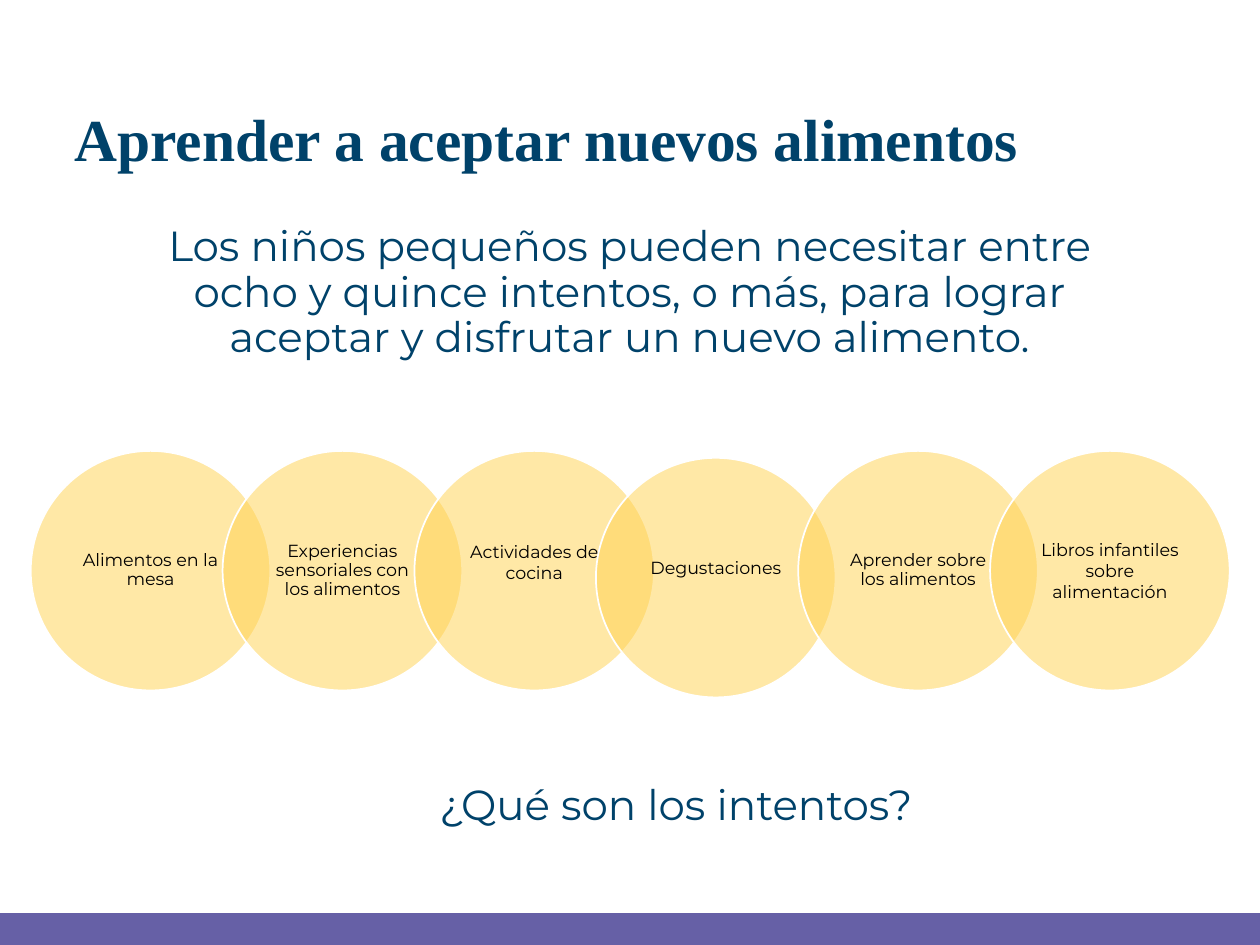
from lxml import etree
from pptx import Presentation
from pptx.dml.color import RGBColor
from pptx.enum import shapes, text
from pptx.oxml.ns import qn
from pptx.util import Cm, Pt

NAVY, GOLD, PURPLE = "00426A", "FFD24F", "6660A6"
BODY = "Montserrat"


def color(code):
    return RGBColor.from_string(code)


def write(frame, words, size, ink, face=BODY, bold=False, align="CENTER", gap=0.9):
    """Fill a text frame with one formatted paragraph."""
    frame.word_wrap = True
    frame.auto_size = text.MSO_AUTO_SIZE.NONE
    frame.text = words
    para = frame.paragraphs[0]
    para.alignment = getattr(text.PP_ALIGN, align)
    para.line_spacing = gap
    para.space_before = Pt(0)
    font = para.runs[0].font
    font.name, font.size, font.bold = face, Pt(size), bold
    font.color.rgb = color(ink)


def shape(slide, kind, box, fill, edge):
    item = slide.shapes.add_shape(kind, *map(Cm, box))
    item.shadow.inherit = False
    item.fill.solid()
    item.fill.fore_color.rgb = color(fill)
    item.line.color.rgb = color(edge)
    item.line.width = Pt(1)
    return item


def title(slide, box, words):
    head = slide.shapes.title
    head.left, head.top, head.width, head.height = map(Cm, box)
    head.text_frame.vertical_anchor = text.MSO_ANCHOR.MIDDLE
    write(head.text_frame, words, 34, NAVY, "Times New Roman", True, "LEFT")


def note(slide, box, words, align="CENTER"):
    area = slide.shapes.add_textbox(*map(Cm, box))
    write(area.text_frame, words, 24, NAVY, align=align)


def circle(slide, box, words, gap, lift):
    """Draw a half-transparent circle whose label sits lift above its centre."""
    disc = shape(slide, shapes.MSO_SHAPE.OVAL, box, GOLD, "FFFFFF")
    tone = disc.fill._xPr.find(qn("a:solidFill"))[0]
    etree.SubElement(tone, qn("a:alpha"), val="50000")
    frame = disc.text_frame
    frame.margin_left = frame.margin_right = Cm(0.25)
    frame.margin_top, frame.margin_bottom = Cm(0.03), Cm(0.03 + 2 * lift)
    frame.vertical_anchor = text.MSO_ANCHOR.MIDDLE
    write(frame, words, 10, "000000", gap=gap)


def chain(slide, box, labels):
    """Lay overlapping circles from the left to the right edge of the box."""
    left, top, width, size = box
    step = (width - size) / (len(labels) - 1)
    for num, (words, gap, lift, right, down) in enumerate(labels):
        spot = (left + num * step + right, top + down, size, size)
        circle(slide, spot, words, gap, lift)


def main():
    deck = Presentation()
    deck.slide_width, deck.slide_height = Cm(25.4), Cm(19.05)
    slide = deck.slides.add_slide(deck.slide_layouts[5])
    shape(slide, shapes.MSO_SHAPE.RECTANGLE, (0, 18.42, 25.4, 0.63), PURPLE, PURPLE)
    title(slide, (1.25, 1.02, 23.55, 3.68), "Aprender a aceptar nuevos alimentos")
    note(slide, (2.85, 4.42, 19.68, 3.05),
         "Los niños pequeños pueden necesitar entre ocho y quince intentos, "
         "o más, para lograr aceptar y disfrutar un nuevo alimento.")
    # Label, line spacing, label lift, shift right, shift down
    chain(slide, (0.62, 9.09, 24.17, 4.83), [
        ("Alimentos en la mesa", 0.9, 0, 0, 0),
        ("Experiencias sensoriales con los alimentos", 0.9, 0, 0, 0),
        ("Actividades de cocina", 1, 0.18, 0, 0),
        ("Degustaciones", 1, 0.21, -0.21, 0.14),
        ("Aprender sobre los alimentos", 0.9, 0, 0, 0),
        ("Libros infantiles sobre alimentación", 1, 0, 0, 0),
    ])
    note(slide, (8.61, 15.68, 11, 1.3), "¿Qué son los intentos?", "LEFT")
    deck.save("out.pptx")


if __name__ == "__main__":
    main()
